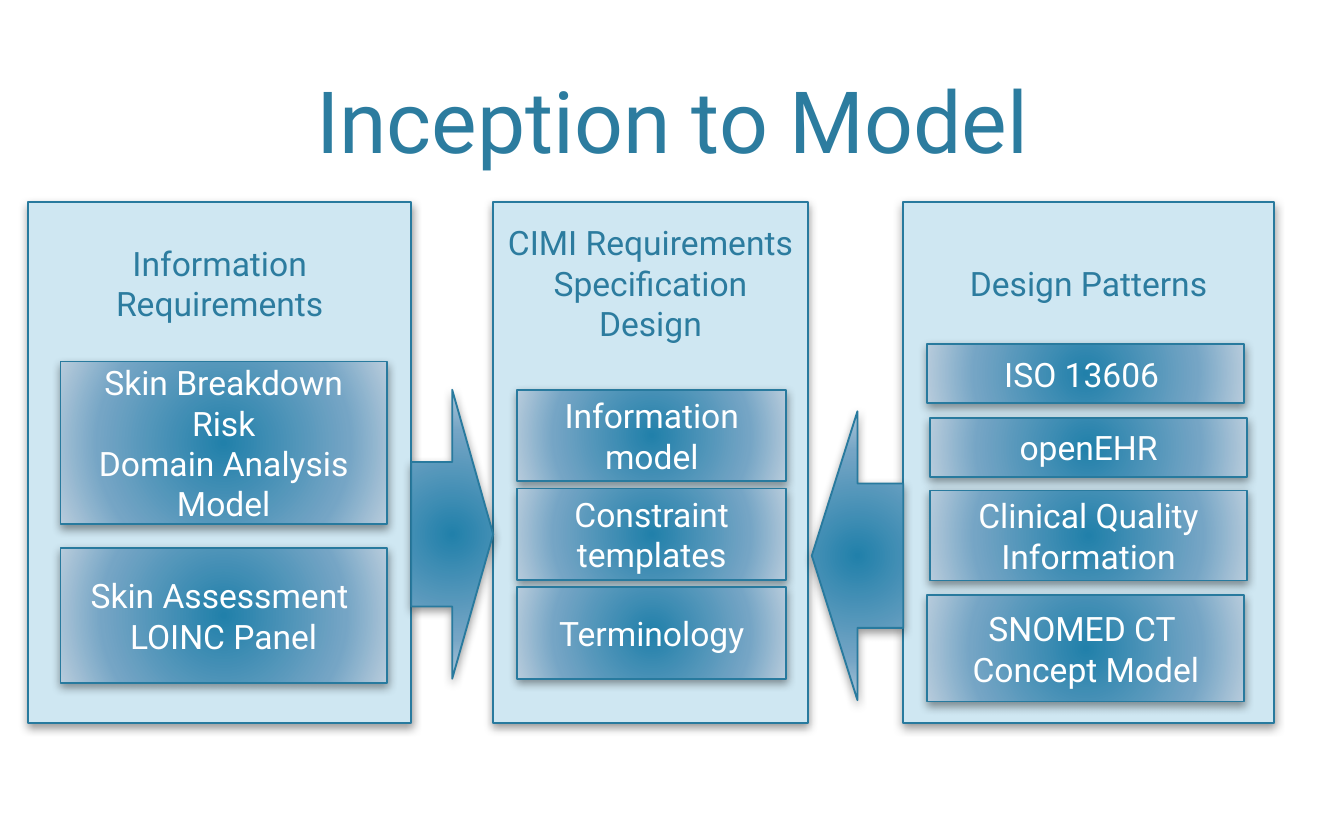
"""Build the 'Inception to Model' slide."""
from pptx import Presentation
from pptx.dml.color import RGBColor
from pptx.enum.shapes import MSO_SHAPE
from pptx.enum.text import MSO_ANCHOR, MSO_AUTO_SIZE, PP_ALIGN
from pptx.oxml import parse_xml
from pptx.oxml.ns import nsdecls
from pptx.util import Inches, Pt

COLOURS = {
    "panel": "CFE7F2", "outline": "287A9E", "heading": "2C7C9F", "card": "FFFFFF",
    "core": "2180AA", "middle": "75A5C5", "rim": "B8CCDC", "shadow": "000000",
}
FONT = "Roboto"
COLUMNS, ROWS = 100, 62.5
PANEL_TOP, PANEL_HEIGHT = 15, 38.8
HEADING_FOOT = 27.2
GLOW_STOPS = ((0, "core"), (69, "middle"), (100, "rim"))
PANELS = [
    (2.1, 28.5, "Information Requirements", [
        (4.5, 26.9, 24.3, 12.1, ["Skin Breakdown Risk", "Domain Analysis Model"]),
        (4.5, 40.8, 24.3, 10, ["Skin Assessment ", "LOINC Panel"]),
    ]),
    (67.2, 27.6, "Design Patterns", [
        (69, 44.3, 23.6, 7.9, ["SNOMED CT ", "Concept Model"]),
        (69, 25.6, 23.6, 4.4, ["ISO 13606 "]),
        (69.2, 31.1, 23.6, 4.4, ["openEHR"]),
        (69.2, 36.5, 23.6, 6.7, ["Clinical Quality Information"]),
    ]),
    (36.7, 23.4, "CIMI Requirements Specification Design", [
        (38.5, 29 + 7.35 * step, 20, 6.8, [label])
        for step, label in enumerate(["Information model", "Constraint templates", "Terminology"])
    ]),
]
ARROWS = [
    (MSO_SHAPE.RIGHT_ARROW, 30.6, 29, 6.1, 21.5),
    (MSO_SHAPE.LEFT_ARROW, 60.4, 30.6, 6.8, 21.5),
]


def grid(value):
    """Turn grid units into a length."""
    return Inches(value * 10 / COLUMNS)


def colour(name):
    """Look up a named colour."""
    return RGBColor.from_string(COLOURS[name])


def write(frame, lines, size, ink, anchor=MSO_ANCHOR.MIDDLE):
    """Write centred lines into a text frame."""
    frame.word_wrap = True
    frame.auto_size = MSO_AUTO_SIZE.NONE
    frame.vertical_anchor = anchor
    for index, line in enumerate(lines):
        para = frame.add_paragraph() if index else frame.paragraphs[0]
        para.alignment = PP_ALIGN.CENTER
        span = para.add_run()
        span.text = line
        span.font.name = FONT
        span.font.size = Pt(size)
        span.font.color.rgb = colour(ink)


def add_block(page, kind, left, top, width, height):
    """Add an outlined shape with a soft shadow."""
    block = page.shapes.add_shape(kind, *map(grid, (left, top, width, height)))
    block.line.color.rgb = colour("outline")
    block.line.width = Pt(1)
    block._element.spPr.append(parse_xml(
        f'<a:effectLst {nsdecls("a")}><a:outerShdw blurRad="{Pt(5)}" dist="{Pt(2)}" '
        f'dir="5400000" rotWithShape="0"><a:srgbClr val="{COLOURS["shadow"]}">'
        '<a:alpha val="40000"/></a:srgbClr></a:outerShdw></a:effectLst>'))
    return block


def glow(block):
    """Fill a shape with a gradient spreading from its centre."""
    stops = "".join(
        f'<a:gs pos="{place * 1000}"><a:srgbClr val="{COLOURS[name]}"/></a:gs>'
        for place, name in GLOW_STOPS)
    block._element.spPr.prstGeom.addnext(parse_xml(
        f'<a:gradFill {nsdecls("a")} rotWithShape="1"><a:gsLst>{stops}</a:gsLst>'
        '<a:path path="circle"><a:fillToRect l="100000" t="100000" r="100000" b="100000"/>'
        '</a:path></a:gradFill>'))


def add_panel(page, left, width, heading, cards):
    """Add a panel with its heading and its cards."""
    panel = add_block(page, MSO_SHAPE.RECTANGLE, left, PANEL_TOP, width, PANEL_HEIGHT)
    panel.fill.solid()
    panel.fill.fore_color.rgb = colour("panel")
    panel.text_frame.margin_bottom = grid(HEADING_FOOT)
    write(panel.text_frame, [heading], 18, "heading")
    for *place, lines in cards:
        card = add_block(page, MSO_SHAPE.RECTANGLE, *place)
        glow(card)
        write(card.text_frame, lines, 18, "card")


def add_title(page, text):
    """Place and format the title."""
    title = page.shapes.title
    title.left, title.top, title.width, title.height = map(grid, (6, 1, 88, 12.2))
    write(title.text_frame, [text], 46, "heading", MSO_ANCHOR.BOTTOM)


def main():
    """Build and save the deck."""
    deck = Presentation()
    deck.slide_width, deck.slide_height = grid(COLUMNS), grid(ROWS)
    page = deck.slides.add_slide(deck.slide_layouts[5])
    add_title(page, "Inception to Model")
    for panel in PANELS:
        add_panel(page, *panel)
    for arrow in ARROWS:
        glow(add_block(page, *arrow))
    deck.save("out.pptx")


if __name__ == "__main__":
    main()
